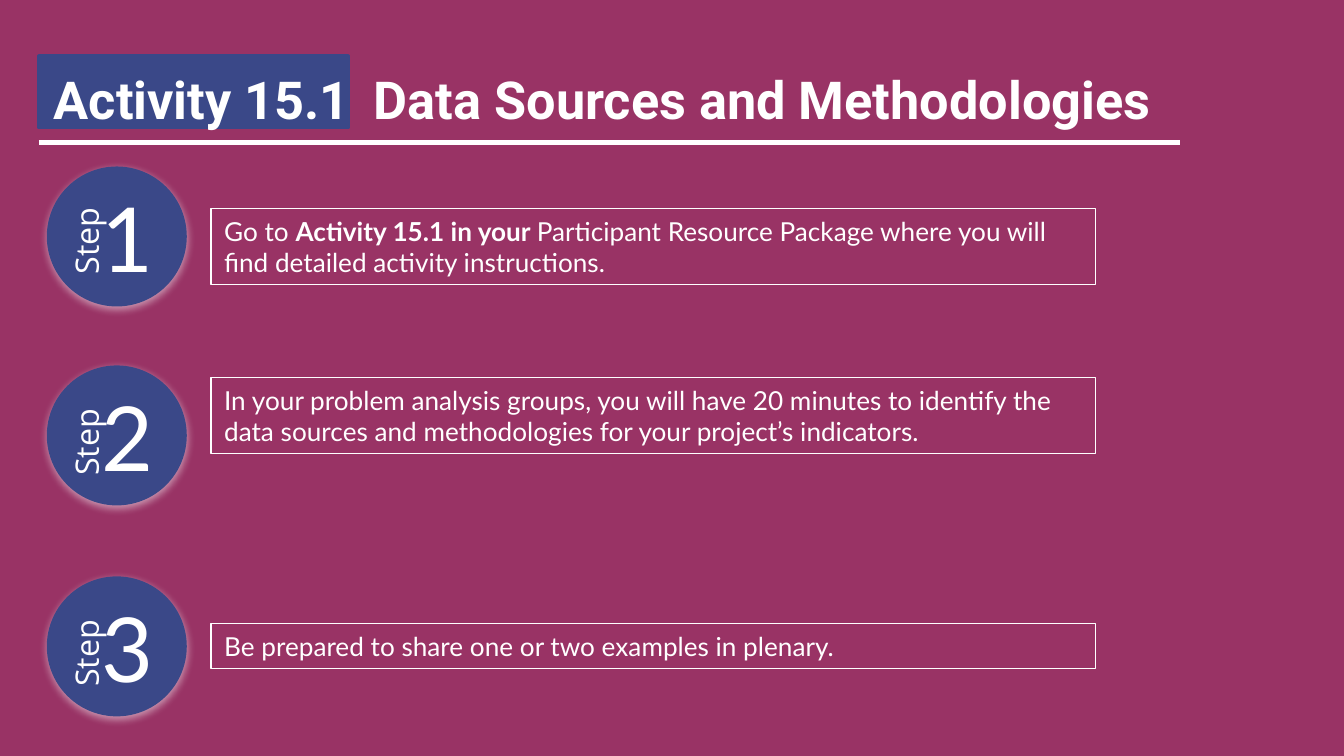
"""Build the Activity 15.1 slide with three numbered steps."""
from dataclasses import dataclass

from lxml.etree import SubElement
from pptx import Presentation
from pptx.dml.color import RGBColor
from pptx.enum.shapes import MSO_CONNECTOR, MSO_SHAPE
from pptx.enum.text import MSO_ANCHOR, MSO_AUTO_SIZE, PP_ALIGN
from pptx.oxml.ns import qn
from pptx.util import Pt


@dataclass(frozen=True)
class Theme:
    back: str = "993365"
    blue: str = "3A4888"
    white: str = "FFFFFF"
    head: tuple = ("Roboto", 28)
    digit: tuple = ("Lato", 48)
    label: tuple = ("Open Sans", 17.3)
    body: tuple = ("Lato", 14)


THEME = Theme()
TITLE = "Activity 15.1\tData Sources and Methodologies"
STEPS = [
    dict(disc=90.7, label=108.7, panel=111.6, lines=2, runs=[
        ("Go to ", False),
        ("Activity 15.1 in your ", True),
        ("Participant Resource Package where you will find detailed activity instructions.", False),
    ]),
    dict(disc=197.3, label=216.7, panel=202.3, lines=2, runs=[
        ("In your problem analysis groups, you will have 20 minutes to identify the "
         "data sources and methodologies for your project’s indicators.", False),
    ]),
    dict(disc=310.3, label=329.8, panel=334.1, lines=1, runs=[
        ("Be prepared to share one or two examples in plenary.", False),
    ]),
]
INSETS = (7.2, 3.6, 7.2, 3.6)
LINE = 16.8


def color(code):
    return RGBColor.from_string(code)


def points(*sizes):
    return [Pt(size) for size in sizes]


def write(shape, runs, style, insets, align=PP_ALIGN.LEFT, anchor=MSO_ANCHOR.TOP):
    frame = shape.text_frame
    frame.word_wrap = True
    frame.vertical_anchor = anchor
    (frame.margin_left, frame.margin_top,
     frame.margin_right, frame.margin_bottom) = points(*insets)
    para = frame.paragraphs[0]
    para.alignment = align
    for text, bold in runs:
        run = para.add_run()
        run.text = text
        run.font.name, run.font.size = style[0], Pt(style[1])
        run.font.bold = bold
        run.font.color.rgb = color(THEME.white)
    return frame


def block(shapes, kind, box, line, width, fill=None):
    shape = shapes.add_shape(kind, *points(*box))
    shape.shadow.inherit = False
    if fill:
        shape.fill.solid()
        shape.fill.fore_color.rgb = color(fill)
    else:
        shape.fill.background()
    shape.line.color.rgb = color(line)
    shape.line.width = Pt(width)
    return shape


def glow(shape):
    effects = shape.element.spPr.find(qn("a:effectLst"))
    outer = SubElement(effects, qn("a:outerShdw"), blurRad=str(Pt(4.5)), dist=str(Pt(1.5)),
                       dir="5400000", algn="t", rotWithShape="0")
    tint = SubElement(outer, qn("a:srgbClr"), val=THEME.white)
    SubElement(tint, qn("a:alpha"), val="49000")


def header(slide):
    block(slide.shapes, MSO_SHAPE.RECTANGLE, (20.9, 30.2, 165.6, 38.2),
          THEME.blue, 2, THEME.blue)
    title = slide.shapes.title
    slide.shapes.element.append(title.element)
    title.left, title.top, title.width, title.height = points(21.6, 32.4, 677, 41)
    para = title.text_frame.paragraphs[0]
    tabs = SubElement(para._p.get_or_add_pPr(), qn("a:tabLst"))
    SubElement(tabs, qn("a:tab"), pos=str(Pt(171.5)), algn="l")
    frame = write(title, [(TITLE, True)], THEME.head, INSETS)
    frame.auto_size = MSO_AUTO_SIZE.SHAPE_TO_FIT_TEXT
    rule = slide.shapes.add_connector(MSO_CONNECTOR.STRAIGHT, *points(20.9, 76.3, 632.2, 76.3))
    rule.line.color.rgb = color(THEME.white)
    rule.line.width = Pt(3)
    SubElement(rule.element.spPr, qn("a:effectLst"))


def badge(slide, number, step):
    group = slide.shapes.add_group_shape()
    disc = block(group.shapes, MSO_SHAPE.OVAL, (26.6, step["disc"], 72, 72),
                 THEME.blue, 3, THEME.blue)
    glow(disc)
    write(disc, [(str(number), False)], THEME.digit, (11, 0, 0, 0),
          PP_ALIGN.CENTER, MSO_ANCHOR.MIDDLE)
    label = group.shapes.add_textbox(*points(7.9, step["label"], 72.7, 36))
    label.rotation = 270
    write(label, [("Step", False)], THEME.label, (9.4, 9.4, 13.9, 9.4), PP_ALIGN.CENTER)


def panel(slide, step):
    height = step["lines"] * LINE + INSETS[1] + INSETS[3]
    shape = block(slide.shapes, MSO_SHAPE.RECTANGLE, (113, step["panel"], 473.8, height),
                  THEME.white, 0.75)
    frame = write(shape, step["runs"], THEME.body, INSETS)
    frame.auto_size = MSO_AUTO_SIZE.SHAPE_TO_FIT_TEXT


def main():
    deck = Presentation()
    deck.slide_width, deck.slide_height = points(720, 405)
    slide = deck.slides.add_slide(deck.slide_layouts[5])
    slide.background.fill.solid()
    slide.background.fill.fore_color.rgb = color(THEME.back)
    header(slide)
    for number, step in enumerate(STEPS, 1):
        badge(slide, number, step)
    for step in STEPS:
        panel(slide, step)
    deck.save("out.pptx")


if __name__ == "__main__":
    main()
